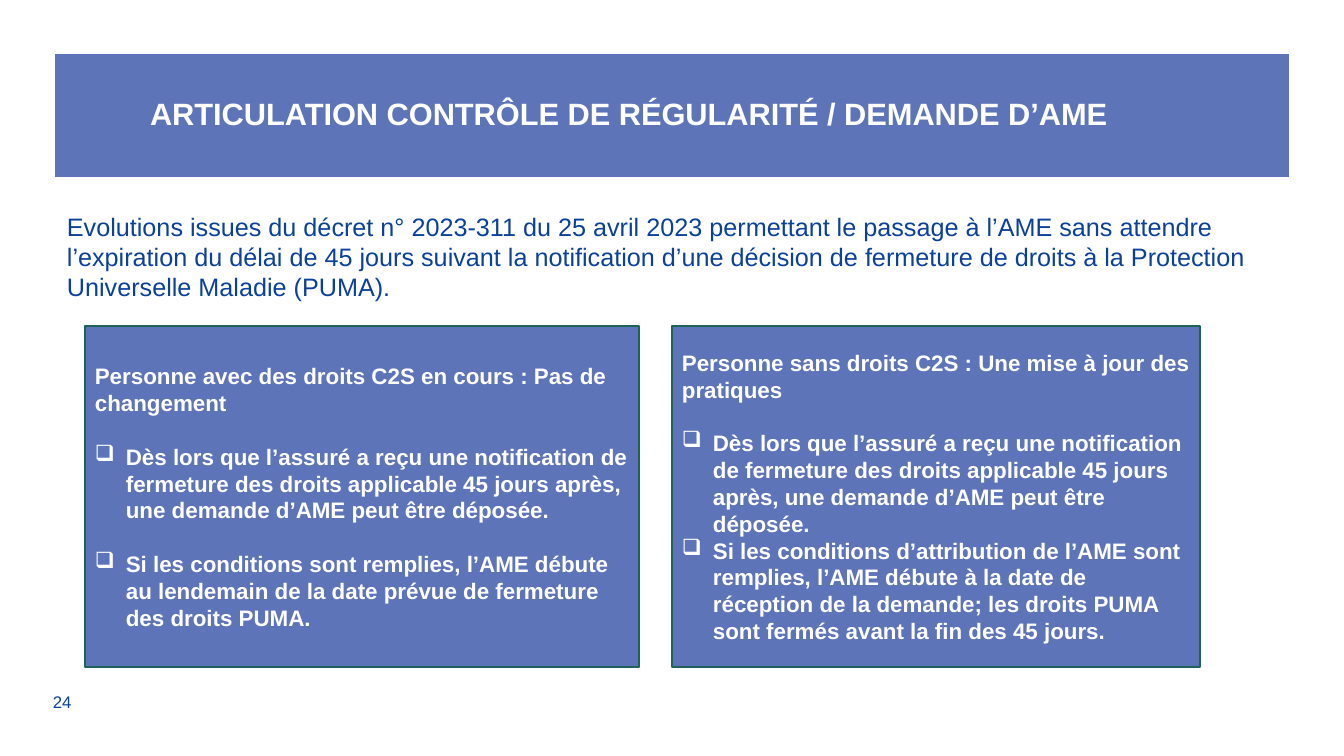
from dataclasses import dataclass

from pptx import Presentation
from pptx.dml.color import RGBColor
from pptx.enum.shapes import MSO_SHAPE as SHAPE
from pptx.enum.text import MSO_ANCHOR as ANCHOR, PP_ALIGN as ALIGN
from pptx.oxml.xmlchemy import OxmlElement
from pptx.util import Emu, Pt

SLIDE_W, SLIDE_H = 1344, 756
EMU_PER_PX = 12192000 / SLIDE_W


@dataclass(frozen=True)
class Theme:
    """Colours and type sizes of the slide."""
    font: str = "Arial"
    blue: RGBColor = RGBColor(0x0C, 0x41, 0x9A)
    panel: RGBColor = RGBColor(0x5E, 0x74, 0xB8)
    border: RGBColor = RGBColor(0x1E, 0x62, 0x59)
    white: RGBColor = RGBColor(0xFF, 0xFF, 0xFF)
    title: int = 22
    intro: int = 18
    body: int = 16
    number: int = 12
    blank_line: int = 19


THEME = Theme()

TITLE = "ARTICULATION CONTRÔLE DE RÉGULARITÉ / DEMANDE D’AME"
INTRO = (
    "Evolutions issues du décret n° 2023-311 du 25 avril 2023 permettant le passage "
    "à l’AME sans attendre l’expiration du délai de 45 jours suivant la notification "
    "d’une décision de fermeture de droits à la Protection Universelle Maladie (PUMA)."
)
NOTIFIED = (
    "Dès lors que l’assuré a reçu une notification de fermeture des droits applicable "
    "45 jours après, une demande d’AME peut être déposée."
)
WITH_RIGHTS = (
    "Personne avec des droits C2S en cours : Pas de changement",
    [
        (NOTIFIED, True),
        ("Si les conditions sont remplies, l’AME débute au lendemain de la date prévue "
         "de fermeture des droits PUMA.", True),
    ],
)
WITHOUT_RIGHTS = (
    "Personne sans droits C2S : Une mise à jour des pratiques",
    [
        (NOTIFIED, True),
        ("Si les conditions d’attribution de l’AME sont remplies, l’AME débute à la date "
         "de réception de la demande; les droits PUMA sont fermés avant la fin des "
         "45 jours.", False),
    ],
)


def px(n):
    """Turn pixels into EMU."""
    return Emu(round(n * EMU_PER_PX))


def style(p, size, color, bold=False):
    """Format the runs of a left-aligned paragraph."""
    p.alignment = ALIGN.LEFT
    for r in p.runs:
        r.font.name = THEME.font
        r.font.size = Pt(size)
        r.font.bold = bold
        r.font.color.rgb = color


def add_bullet(p, indent):
    """Give a paragraph a hanging box bullet."""
    pPr = p._p.get_or_add_pPr()
    pPr.set("marL", str(px(indent)))
    pPr.set("indent", str(-px(indent)))
    bullet = OxmlElement("a:buChar")
    bullet.set("char", "❑")
    pPr.append(bullet)


def add_panel(s, box, border=None):
    """Draw a filled rectangle and return its text frame."""
    sp = s.shapes.add_shape(SHAPE.RECTANGLE, *map(px, box))
    sp.shadow.inherit = False
    sp.fill.solid()
    sp.fill.fore_color.rgb = THEME.panel
    if border is None:
        sp.line.fill.background()
    else:
        sp.line.color.rgb = border
        sp.line.width = Pt(1)
    tf = sp.text_frame
    tf.word_wrap = True
    tf.vertical_anchor = ANCHOR.MIDDLE
    return tf


def add_title(s, box):
    """Place the title band."""
    tf = add_panel(s, box)
    tf.margin_left = px(95)
    tf.margin_right = tf.margin_top = tf.margin_bottom = px(8)
    tf.text = TITLE
    tf.paragraphs[0].line_spacing = 0.9
    style(tf.paragraphs[0], THEME.title, THEME.white, bold=True)


def add_text(s, box, text, size, anchor=ANCHOR.TOP):
    """Place a blue text box."""
    tf = s.shapes.add_textbox(*map(px, box)).text_frame
    tf.word_wrap = True
    tf.vertical_anchor = anchor
    tf.text = text
    style(tf.paragraphs[0], size, THEME.blue)


def add_case(s, box, heading, points):
    """Place a bordered panel with a heading and bullet points."""
    tf = add_panel(s, box, THEME.border)
    tf.text = heading
    style(tf.paragraphs[0], THEME.body, THEME.white, bold=True)
    for text, spaced in points:
        p = tf.add_paragraph()
        p.text = text
        if spaced:
            p.space_before = Pt(THEME.blank_line)
        add_bullet(p, 31)
        style(p, THEME.body, THEME.white, bold=True)


def main():
    """Build the slide and save it."""
    prs = Presentation()
    prs.slide_width, prs.slide_height = px(SLIDE_W), px(SLIDE_H)
    s = prs.slides.add_slide(prs.slide_layouts[6])
    add_text(s, (43, 686, 80, 31), "24", THEME.number, ANCHOR.MIDDLE)
    add_title(s, (55, 54, 1234, 123))
    add_text(s, (57, 206, 1231, 102), INTRO, THEME.intro)
    add_case(s, (85, 326, 554, 341), *WITH_RIGHTS)
    add_case(s, (672, 326, 528, 341), *WITHOUT_RIGHTS)
    prs.save("out.pptx")


if __name__ == "__main__":
    main()
